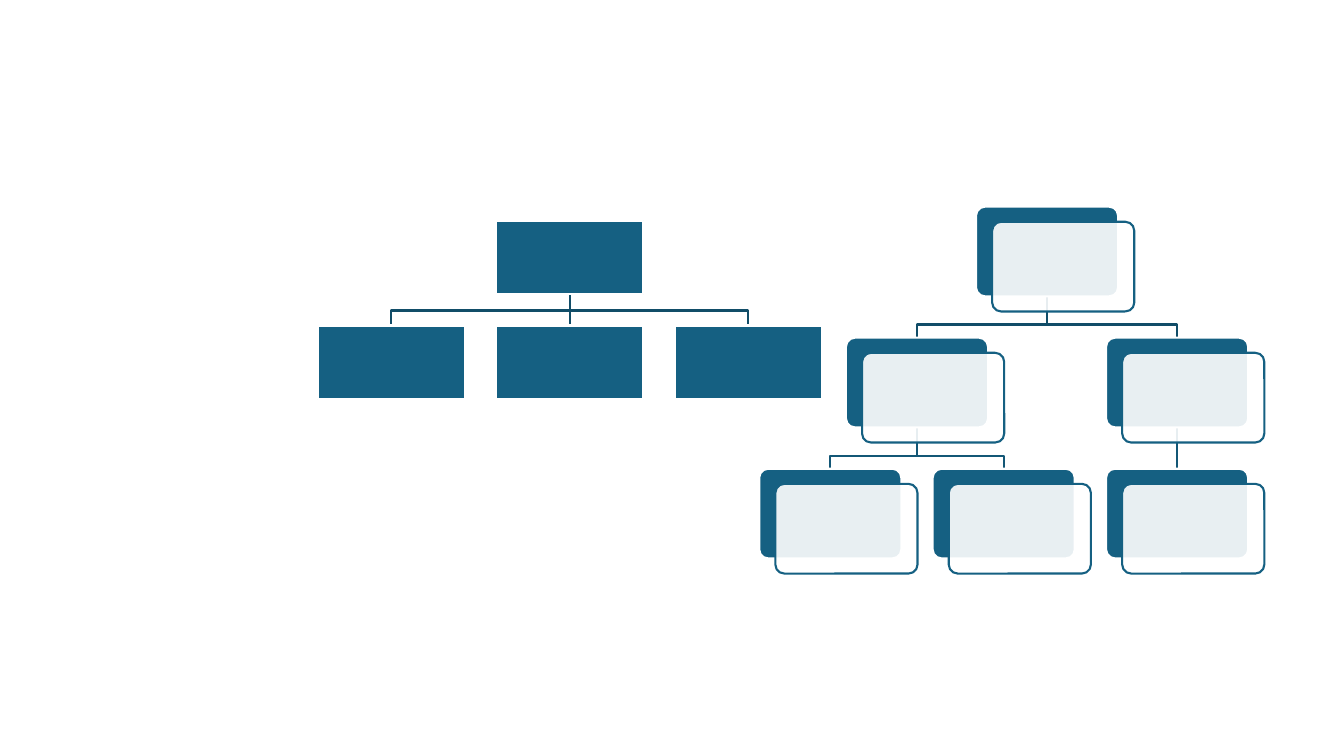
from dataclasses import dataclass

import pptx
import pptx.dml.color
import pptx.enum.shapes
import pptx.oxml
import pptx.oxml.ns
import pptx.util
from lxml import etree

SCALE = 9144  # EMU per px, 100 px to the inch
SHAPE = pptx.enum.shapes.MSO_SHAPE


@dataclass(frozen=True)
class Theme:
    accent: str = "156082"
    paper: str = "FFFFFF"
    branches: tuple = ("114D68", "135776")  # by level of the parent
    line_width: float = 1.5
    veil_opacity: int = 90


@dataclass(frozen=True)
class Box:
    left: int
    top: int
    width: int
    height: int


@dataclass(frozen=True)
class Node:
    column: float
    level: int
    parent: int | None = None


THEME = Theme()


def px(length):
    return round(length * SCALE)


def rgb(colour):
    return pptx.dml.color.RGBColor.from_string(colour)


def set_line(shape, colour):
    shape.line.color.rgb = rgb(colour)
    shape.line.width = pptx.util.Pt(THEME.line_width)


def add_panel(group, kind, box, fill, line):
    panel = group.shapes.add_shape(
        kind, px(box.left), px(box.top), px(box.width), px(box.height))
    panel.shadow.inherit = False
    panel.fill.solid()
    panel.fill.fore_color.rgb = rgb(fill)
    set_line(panel, line)
    if kind == SHAPE.ROUNDED_RECTANGLE:
        panel.adjustments[0] = 0.1
    return panel


def add_plain_card(group, box):
    add_panel(group, SHAPE.RECTANGLE, box, THEME.accent, THEME.paper)


def add_layered_card(group, box):
    """Solid card with a translucent one shifted down and right over it."""
    kind = SHAPE.ROUNDED_RECTANGLE
    add_panel(group, kind, box, THEME.accent, THEME.paper)
    front = Box(box.left + 16, box.top + 15, box.width, box.height)
    veil = add_panel(group, kind, front, THEME.paper, THEME.accent)
    colour = veil.fill._xPr.find(".//" + pptx.oxml.ns.qn("a:srgbClr"))
    alpha = etree.SubElement(colour, pptx.oxml.ns.qn("a:alpha"))
    alpha.set("val", str(THEME.veil_opacity * 1000))


def add_branch(group, parent, child, drop, colour):
    """Line from the parent's foot to the child's head, bent after drop px."""
    start_x, end_x = (card.left + card.width / 2 for card in (parent, child))
    start_y, end_y = parent.top + parent.height, child.top
    if start_x == end_x:
        branch = group.shapes.add_connector(
            pptx.enum.shapes.MSO_CONNECTOR.STRAIGHT,
            px(start_x), px(start_y), px(end_x), px(end_y))
        etree.SubElement(branch._element.spPr, pptx.oxml.ns.qn("a:effectLst"))
    else:
        bend_y = start_y + drop
        outline = group.shapes.build_freeform(px(start_x), px(start_y))
        outline.add_line_segments(
            [(px(x), px(y)) for x, y in
             ((start_x, bend_y), (end_x, bend_y), (end_x, end_y))],
            close=False)
        branch = outline.convert_to_shape()
        branch.shadow.inherit = False
        branch.fill.background()
    set_line(branch, colour)


def add_hierarchy(slide, box, nodes, card_size, drop, add_card):
    """Fit the cards of a tree to the box, on top of their branches."""
    width, height = card_size
    column_step = (box.width - width) / max(node.column for node in nodes)
    level_step = (box.height - height) / max(node.level for node in nodes)
    cards = [Box(box.left + node.column * column_step,
                 box.top + node.level * level_step, width, height)
             for node in nodes]
    group = slide.shapes.add_group_shape()
    for node, card in zip(nodes, cards):
        if node.parent is not None:
            colour = THEME.branches[nodes[node.parent].level]
            add_branch(group, cards[node.parent], card, drop, colour)
    for card in cards:
        add_card(group, card)


def main():
    deck = pptx.Presentation()
    deck.slide_width, deck.slide_height = px(1333), px(750)
    slide = deck.slides.add_slide(deck.slide_layouts[6])
    slide.background.fill.solid()
    slide.background.fill.fore_color.rgb = rgb(THEME.paper)

    two_levels = [Node(1, 0)] + [Node(column, 1, 0) for column in range(3)]
    add_hierarchy(slide, Box(315, 219, 500, 177), two_levels,
                  (146, 73), 16, add_plain_card)

    three_levels = [Node(1.25, 0), Node(0.5, 1, 0), Node(0, 2, 1),
                    Node(1, 2, 1), Node(2, 1, 0), Node(2, 2, 4)]
    add_hierarchy(slide, Box(753, 205, 485, 349), three_levels,
                  (141, 89), 28, add_layered_card)
    deck.save("out.pptx")


if __name__ == "__main__":
    main()
